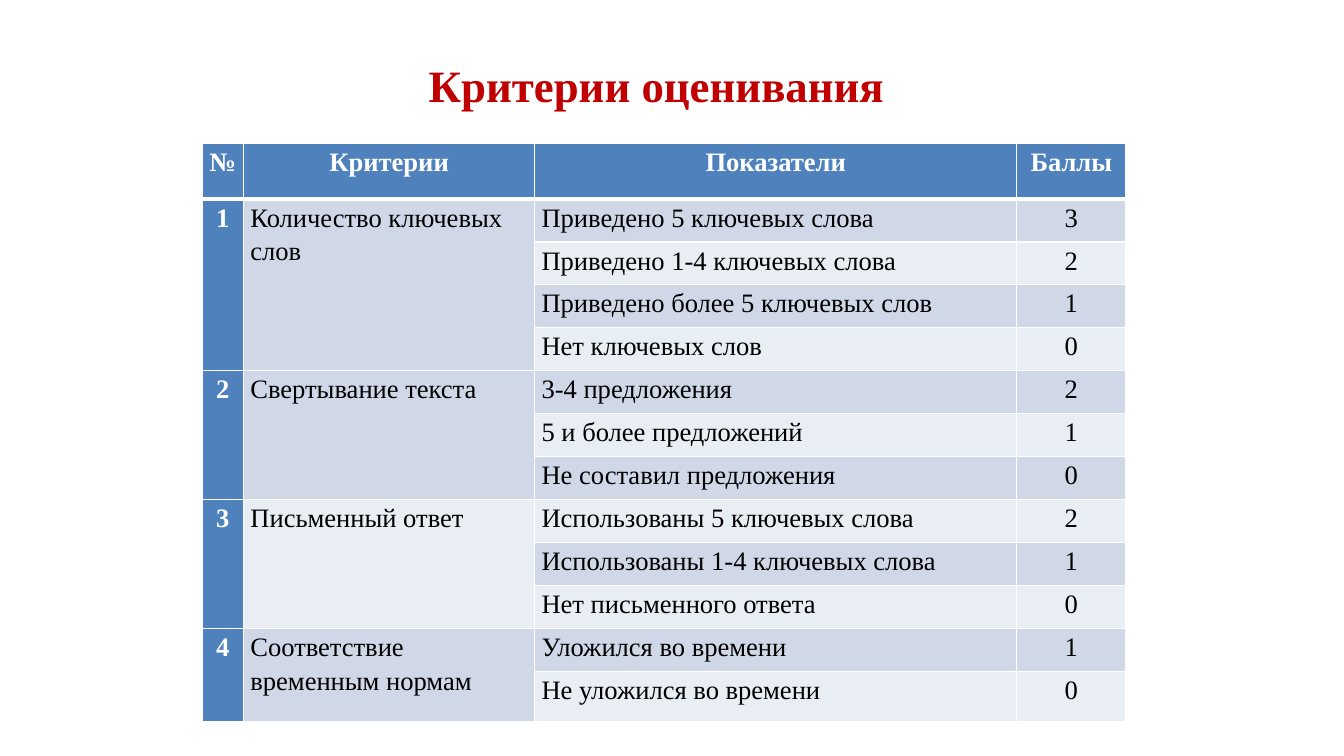
"""Build a slide with a table of grading criteria, indicators and points."""
from lxml import etree
from pptx import Presentation
from pptx import util as u
from pptx.dml import color
from pptx.enum import text
from pptx.oxml import ns

CENTER, LEFT = text.PP_ALIGN.CENTER, text.PP_ALIGN.LEFT
BLUE, WHITE, BLACK, RED = "4F81BD", "FFFFFF", "000000", "C00000"
BANDS = ["E9EDF4", "D0D8E8"]


def write(frame, words, align, hue, **font_format):
    frame.text = words
    paragraph = frame.paragraphs[0]
    paragraph.alignment = align
    font = paragraph.runs[0].font
    for key, value in {"name": "Times New Roman", **font_format}.items():
        setattr(font, key, value)
    font.color.rgb = color.RGBColor.from_string(hue)
    return paragraph


def add_borders(cell, widths):
    properties = cell._tc.get_or_add_tcPr()
    for place, (side, width) in enumerate(widths.items()):
        line = etree.Element(ns.qn(f"a:ln{side}"), w=str(u.Pt(width)))
        fill = etree.SubElement(line, ns.qn("a:solidFill"))
        etree.SubElement(fill, ns.qn("a:srgbClr"), val=WHITE)
        properties.insert(place, line)


headings = ["№", "Критерии", "Показатели", "Баллы"]
criteria = [
    ("Количество ключевых слов", [
        ("Приведено 5 ключевых слова", 3),
        ("Приведено 1-4 ключевых слова", 2),
        ("Приведено более 5 ключевых слов", 1),
        ("Нет ключевых слов", 0)]),
    ("Свертывание текста", [
        ("3-4 предложения", 2),
        ("5 и более предложений", 1),
        ("Не составил предложения", 0)]),
    ("Письменный ответ", [
        ("Использованы 5 ключевых слова", 2),
        ("Использованы 1-4 ключевых слова", 1),
        ("Нет письменного ответа", 0)]),
    ("Соответствие временным нормам", [
        ("Уложился во времени", 1),
        ("Не уложился во времени", 0)]),
]

deck = Presentation()
deck.slide_width, deck.slide_height = u.Pt(960), u.Pt(540)
slide = deck.slides.add_slide(deck.slide_layouts[5])

title = slide.shapes.title
for key, value in {"left": 299, "top": 37.5, "width": 343.5, "height": 46}.items():
    setattr(title, key, u.Pt(value))
write(title.text_frame, "Критерии оценивания", LEFT, RED, size=u.Pt(32), bold=True)
title.text_frame.vertical_anchor = text.MSO_ANCHOR.TOP

column_widths = [29.7, 208, 344.3, 78]
row_heights = [39.6] + [30.7] * 11 + [35.3]
grid = slide.shapes.add_table(
    len(row_heights), len(column_widths), u.Pt(144.3), u.Pt(102.5),
    u.Pt(sum(column_widths)), u.Pt(sum(row_heights))).table
for column, width in zip(grid.columns, column_widths):
    column.width = u.Pt(width)
for row, height in zip(grid.rows, row_heights):
    row.height = u.Pt(height)

entries = {(0, column): heading for column, heading in enumerate(headings)}
row = 1
for number, (criterion, indicators) in enumerate(criteria, 1):
    last = row + len(indicators) - 1
    for column, words in enumerate([str(number), criterion]):
        entries[row, column] = words
        grid.cell(row, column).merge(grid.cell(last, column))
    for indicator, points in indicators:
        entries[row, 2], entries[row, 3] = indicator, str(points)
        row += 1

margins = {"margin_left": 4.9, "margin_right": 4.9, "margin_top": 0, "margin_bottom": 0}
for (row, column), words in entries.items():
    cell = grid.cell(row, column)
    accent = row == 0 or column == 0
    for key, value in margins.items():
        setattr(cell, key, u.Pt(value))
    cell.fill.solid()
    cell.fill.fore_color.rgb = color.RGBColor.from_string(BLUE if accent else BANDS[row % 2])
    align = CENTER if accent or column == 3 else LEFT
    hue = WHITE if accent else BLACK
    write(cell.text_frame, words, align, hue, size=u.Pt(19), bold=accent).line_spacing = 1.15
    add_borders(cell, {"L": 1, "R": 1, "T": 3 if row == 1 else 1, "B": 3 if row == 0 else 1})

deck.save("out.pptx")
